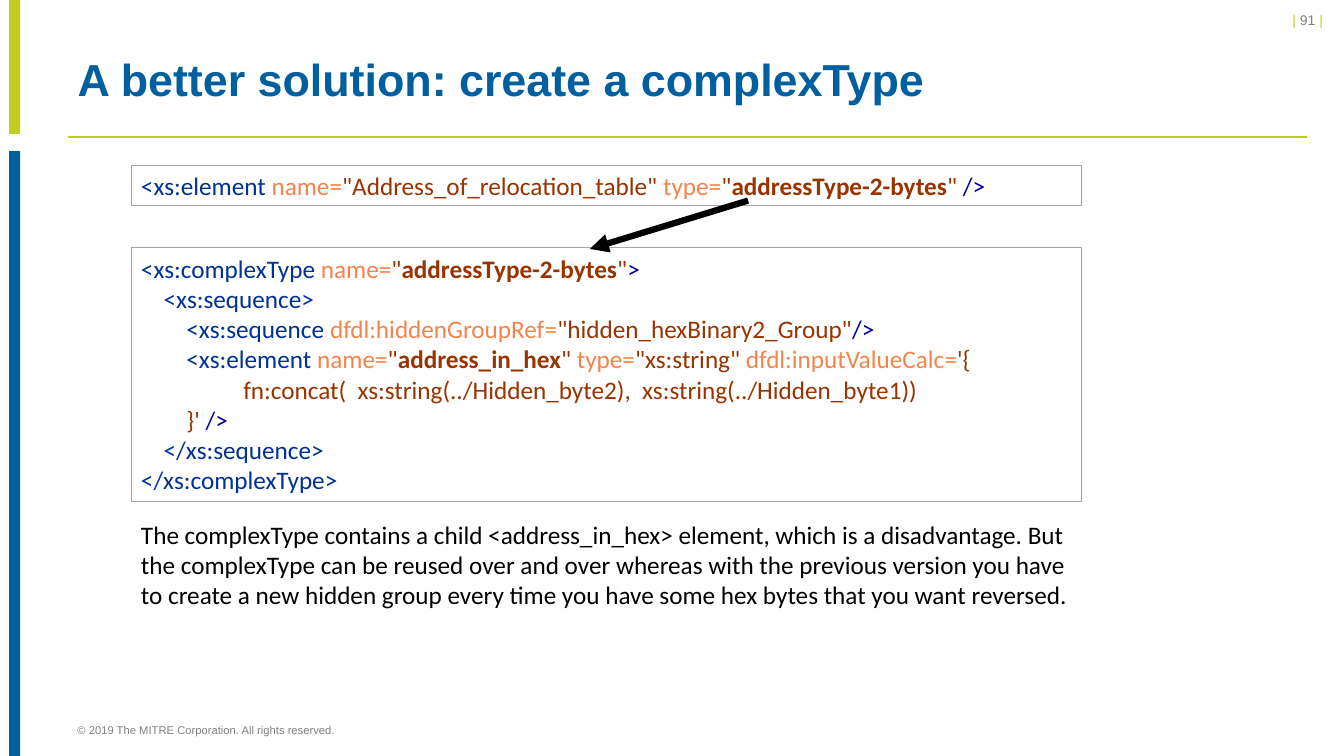
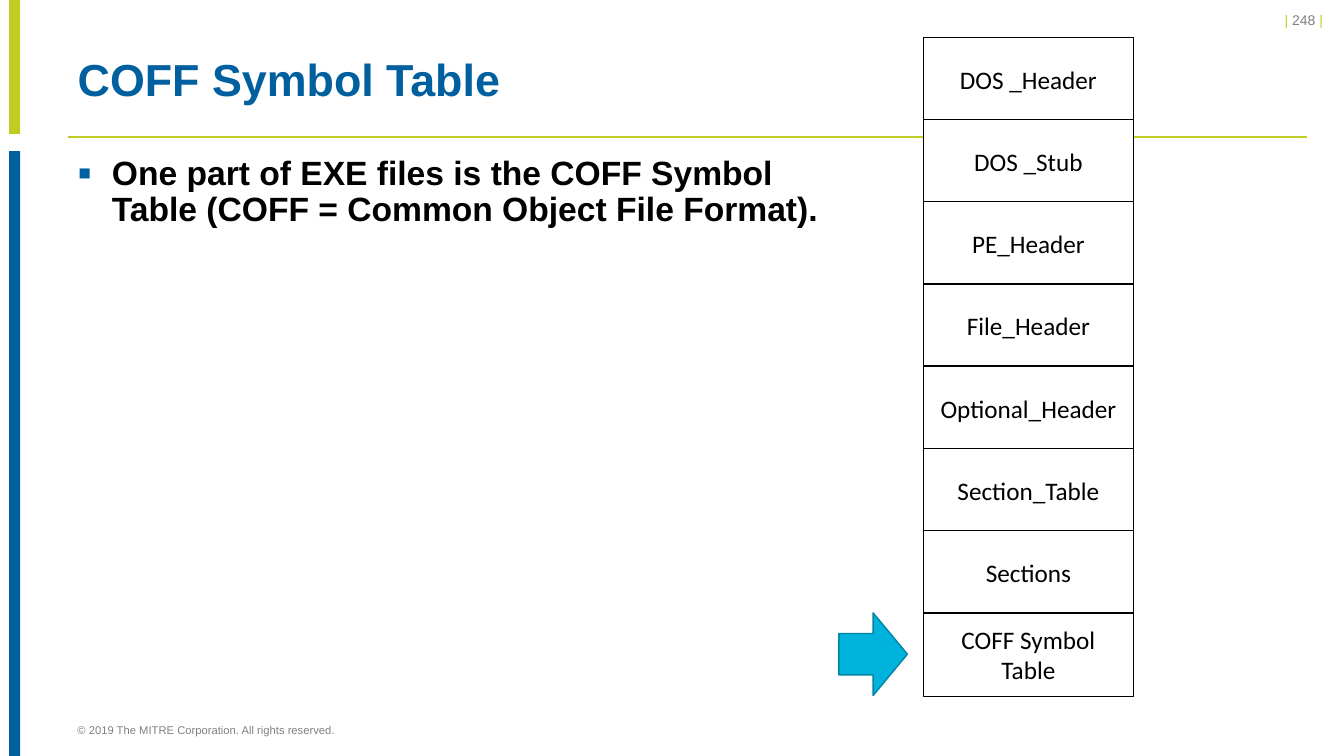
from lxml.etree import SubElement
from pptx import Presentation
from pptx.dml.color import RGBColor
from pptx.enum.shapes import MSO_CONNECTOR as LINK, MSO_SHAPE as SHAPE
from pptx.enum.text import MSO_ANCHOR as ANCHOR, MSO_AUTO_SIZE as FIT, PP_ALIGN as ALIGN
from pptx.oxml.ns import qn
from pptx.util import Inches, Pt

LIME, BLUE, GREY, BLACK, WHITE = "C1CD23", "005F9E", "808080", "000000", "FFFFFF"
TAG, ATTR, EQUAL, VALUE, CLOSE = "003296", "F5844C", "FF8040", "993300", "000096"
LEFT, WIDE = 0.67, 12.29
TITLE_ONLY, TITLE_BODY = 5, 1


def rgb(code):
    return RGBColor.from_string(code)


def inches(*sizes):
    return [Inches(size) for size in sizes]


def place(shape, box):
    shape.left, shape.top, shape.width, shape.height = inches(*box)


def bullet(para, mark, color, scale, indent):
    props = para._p.get_or_add_pPr()
    props.set("marL", str(Inches(indent)))
    props.set("indent", str(-Inches(indent)))
    SubElement(SubElement(props, qn("a:buClr")), qn("a:srgbClr"), val=color)
    SubElement(props, qn("a:buSzPct"), val=str(scale * 1000))
    SubElement(props, qn("a:buFont"), typeface="Arial")
    SubElement(props, qn("a:buChar"), char=mark)


def write(shape, paras, font="Calibri", size=18, color=BLACK, bold=False,
          align=ALIGN.LEFT, anchor=ANCHOR.TOP, spacing=1.0, mark=None):
    """Fill a shape; a paragraph is a string or a list of (text, colour, bold) runs."""
    frame = shape.text_frame
    frame.word_wrap, frame.auto_size = True, FIT.NONE
    frame.vertical_anchor = anchor
    for index, runs in enumerate(paras):
        para = frame.add_paragraph() if index else frame.paragraphs[0]
        if mark:
            bullet(para, **mark)
        para.alignment, para.line_spacing = align, spacing
        para.space_before = para.space_after = Pt(0)
        if isinstance(runs, str):
            runs = [(runs, color, bold)]
        for text, ink, strong in runs:
            run = para.add_run()
            run.text = text
            run.font.name, run.font.size = font, Pt(size)
            run.font.bold, run.font.color.rgb = strong, rgb(ink)


def label(slide, box, paras, **style):
    write(slide.shapes.add_textbox(*inches(*box)), paras, **style)


def block(slide, box, fill=None, line=None, weight=1, kind=SHAPE.RECTANGLE):
    shape = slide.shapes.add_shape(kind, *inches(*box))
    shape.shadow.inherit = False
    if fill:
        shape.fill.solid()
        shape.fill.fore_color.rgb = rgb(fill)
    else:
        shape.fill.background()
    if line:
        shape.line.color.rgb, shape.line.width = rgb(line), Pt(weight)
    else:
        shape.line.fill.background()
    return shape


def rule(slide, start, end, color, weight, head=False):
    line = slide.shapes.add_connector(LINK.STRAIGHT, *inches(*start, *end))
    line.line.color.rgb, line.line.width = rgb(color), Pt(weight)
    if head:
        SubElement(line.line._get_or_add_ln(), qn("a:tailEnd"), type="triangle")
    SubElement(line._element.spPr, qn("a:effectLst"))


def base(deck, layout, title, page):
    """Add a slide with the shared bands, title, page number and footer."""
    slide = deck.slides.add_slide(deck.slide_layouts[layout])
    block(slide, (0.09, 0, 0.11, 1.33), LIME)
    block(slide, (0.09, 1.5, 0.11, 6), BLUE)
    rule(slide, (LEFT, 1.36), (LEFT + WIDE, 1.36), LIME, 1)
    number = [("| ", LIME, False), (f"{page} ", GREY, False), ("|", LIME, False)]
    label(slide, (10.88, 0.07, 2.34, 0.27), [number],
          font="Arial", size=10, align=ALIGN.RIGHT)
    place(slide.shapes.title, (LEFT, 0.4, WIDE, 0.82))
    write(slide.shapes.title, [title], font="Arial", size=32, color=BLUE,
          bold=True, anchor=ANCHOR.MIDDLE, spacing=0.9)
    label(slide, (LEFT, 7.13, 8.24, 0.26),
          ["© 2019 The MITRE Corporation. All rights reserved."],
          font="Arial", size=8, color=GREY)
    return slide


def plain(text, color=TAG):
    return [(text, color, False)]


def attr(name, value, strong=False):
    """Runs for one XML attribute with its quoted value."""
    return [(f" {name}", ATTR, False), ("=", EQUAL, False), ('"', VALUE, False),
            (value, VALUE, strong), ('"', VALUE, False)]


def code(slide, box, lines):
    write(block(slide, box, line="A6A6A6", weight=0.75), lines)


def stack(slide, box, pitch, names):
    """Boxes one below the other; box is the first, pitch the step down."""
    left, top, width, height = box
    for row, name in enumerate(names):
        part = block(slide, (left, top + row * pitch, width, height), WHITE, BLACK)
        write(part, name.split("\n"), align=ALIGN.CENTER, anchor=ANCHOR.MIDDLE)


def type_slide(deck):
    slide = base(deck, TITLE_ONLY, "A better solution: create a complexType", 91)
    left, width = 1.3, 9.43
    code(slide, (left, 1.64, width, 0.4), [
        plain("<xs:element") + attr("name", "Address_of_relocation_table")
        + attr("type", "addressType-2-bytes", True) + plain(" />", CLOSE),
    ])
    code(slide, (left, 2.46, width, 2.52), [
        plain("<xs:complexType") + attr("name", "addressType-2-bytes", True)
        + plain(">", CLOSE),
        plain("    <xs:sequence>"),
        plain("        <xs:sequence")
        + attr("dfdl:hiddenGroupRef", "hidden_hexBinary2_Group") + plain("/>", CLOSE),
        plain("        <xs:element") + attr("name", "address_in_hex", True)
        + attr("type", "xs:string") + plain(" dfdl:inputValueCalc", ATTR)
        + plain("=", EQUAL) + plain("'{", VALUE),
        plain("                  fn:concat(  xs:string(../Hidden_byte2),  "
              "xs:string(../Hidden_byte1))", VALUE),
        plain("        }'", VALUE) + plain(" />", CLOSE),
        plain("    </xs:sequence>"),
        plain("</xs:complexType>"),
    ])
    label(slide, (left, 5.1, 9.55, 1.01), [
        "The complexType contains a child <address_in_hex> element, which is a "
        "disadvantage. But the complexType can be reused over and over whereas with "
        "the previous version you have to create a new hidden group every time you "
        "have some hex bytes that you want reversed."])
    rule(slide, (7.42, 1.99), (5.85, 2.47), BLACK, 4.5, head=True)


def table_slide(deck):
    slide = base(deck, TITLE_BODY, "COFF Symbol Table", 248)
    body = slide.placeholders[1]
    place(body, (LEFT, 1.5, 7.65, 1.55))
    write(body, ["One part of EXE files is the COFF Symbol Table "
                 "(COFF = Common Object File Format)."],
          font="Arial", size=24, bold=True, spacing=0.9,
          mark=dict(mark="▪", color=BLUE, scale=120, indent=0.34))
    names = ["DOS _Header", "DOS _Stub", "PE_Header", "File_Header",
             "Optional_Header", "Section_Table", "Sections", "COFF Symbol\nTable"]
    top, last = 0.37, 6.08
    stack(slide, (9.16, top, 2.08, 0.83), (last - top) / (len(names) - 1), names)
    block(slide, (8.32, last, 0.68, 0.82), "00B3DC", "0084A3", kind=SHAPE.RIGHT_ARROW)


def main():
    deck = Presentation()
    deck.slide_width, deck.slide_height = inches(13.33, 7.5)
    type_slide(deck)
    table_slide(deck)
    deck.save("out.pptx")


if __name__ == "__main__":
    main()
